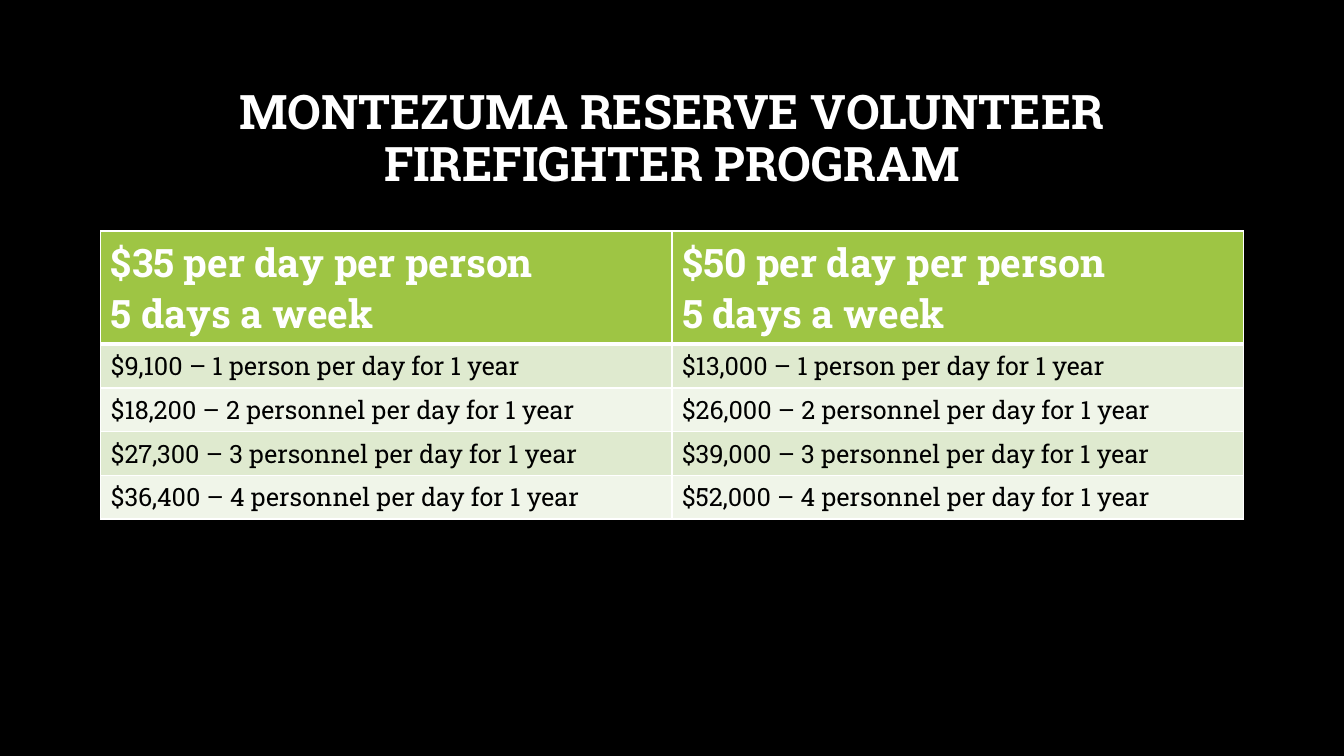
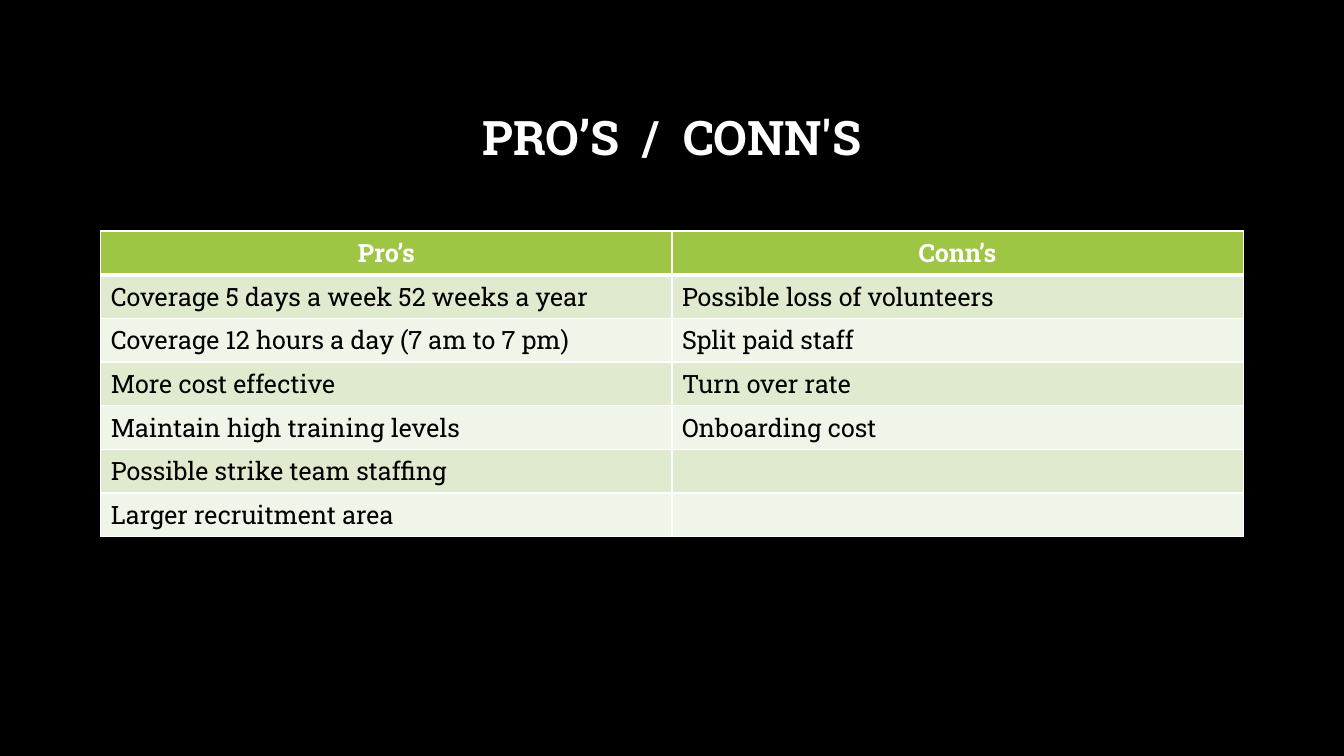
from lxml.etree import SubElement
from pptx import Presentation
from pptx.dml.color import RGBColor
from pptx.enum.text import MSO_ANCHOR, MSO_AUTO_SIZE, PP_ALIGN
from pptx.oxml.ns import qn
from pptx.util import Inches, Pt

COLORS = {
    "background": "000000",
    "light": "FFFFFF",
    "dark": "000000",
    "header": "9EC544",
    "bands": ["DFEACF", "F0F5E9"],
}
FONT = "Roboto Slab"
SLIDE_WIDTH, SLIDE_HEIGHT = Inches(13.33), Inches(7.5)
COLUMN, ROW = SLIDE_WIDTH / 40, SLIDE_HEIGHT / 90
TITLE_BOX = (3, 8, 34, 17.4)
TABLE_BOX = (3, 27.5, 34)
LINE_ROWS = 5.2

PROGRAM = {
    "title": "MONTEZUMA RESERVE VOLUNTEER FIREFIGHTER PROGRAM",
    "headings": ["$35 per day per person\n5 days a week",
                 "$50 per day per person\n5 days a week"],
    "entries": [
        ("$9,100 – 1 person per day for 1 year", "$13,000 – 1 person per day for 1 year"),
        ("$18,200 – 2 personnel per day for 1 year", "$26,000 – 2 personnel per day for 1 year"),
        ("$27,300 – 3 personnel per day for 1 year", "$39,000 – 3 personnel per day for 1 year"),
        ("$36,400 – 4 personnel per day for 1 year", "$52,000 – 4 personnel per day for 1 year"),
    ],
    "heading_size": 28,
    "heading_rows": 13.4,
}
PROS_AND_CONS = {
    "title": "PRO’S  /  CONN'S",
    "headings": ["Pro’s", "Conn’s"],
    "entries": [
        ("Coverage 5 days a week 52 weeks a year", "Possible loss of volunteers"),
        ("Coverage 12 hours a day (7 am to 7 pm)", "Split paid staff"),
        ("More cost effective", "Turn over rate"),
        ("Maintain high training levels", "Onboarding cost"),
        ("Possible strike team staffing", ""),
        ("Larger recruitment area", ""),
    ],
    "heading_align": PP_ALIGN.CENTER,
}


def write(frame, text, size=18, color="dark", bold=False, align=PP_ALIGN.LEFT, spacing=None):
    """Fill a text frame with one formatted paragraph for each line of text."""
    frame.text = text
    for paragraph in frame.paragraphs:
        paragraph.alignment = align
        paragraph.line_spacing = spacing
        font = paragraph.font
        font.name, font.size, font.bold = FONT, Pt(size), bold
        font.color.rgb = RGBColor.from_string(COLORS[color])
        for run in paragraph.runs:
            run.font.name = FONT


def paint_cell(cell, fill, top=1, bottom=1):
    """Give a cell its white borders, in points, and its fill."""
    properties = cell._tc.get_or_add_tcPr()
    for side, width in {"L": 1, "R": 1, "T": top, "B": bottom}.items():
        border = SubElement(properties, qn(f"a:ln{side}"), w=str(Pt(width)))
        solid = SubElement(border, qn("a:solidFill"))
        SubElement(solid, qn("a:srgbClr"), val=COLORS["light"])
    cell.fill.solid()
    cell.fill.fore_color.rgb = RGBColor.from_string(fill)


def prepare_layout(deck):
    """Set the shared background and title box and return the title layout."""
    background = deck.slide_master.background.fill
    background.solid()
    background.fore_color.rgb = RGBColor.from_string(COLORS["background"])
    layout = deck.slide_layouts[5]
    title = layout.placeholders[0]
    left, top, width, height = TITLE_BOX
    title.left, title.width = int(left * COLUMN), int(width * COLUMN)
    title.top, title.height = int(top * ROW), int(height * ROW)
    title.text_frame.vertical_anchor = MSO_ANCHOR.MIDDLE
    title.text_frame.auto_size = MSO_AUTO_SIZE.NONE
    return layout


def add_comparison(slide, box, headings, entries, heading_size=18,
                   heading_rows=LINE_ROWS, heading_align=PP_ALIGN.LEFT):
    """Place a table with a green heading row and banded entries in a box."""
    left, top, width = box
    height = heading_rows + LINE_ROWS * len(entries)
    table = slide.shapes.add_table(
        len(entries) + 1, len(headings), int(left * COLUMN), int(top * ROW),
        int(width * COLUMN), int(height * ROW)).table
    for index, line in enumerate(table.rows):
        line.height = int((LINE_ROWS if index else heading_rows) * ROW)
    for cell, heading in zip(table.rows[0].cells, headings):
        write(cell.text_frame, heading, size=heading_size, color="light",
              bold=True, align=heading_align)
        paint_cell(cell, COLORS["header"], bottom=3)
    for index, entry in enumerate(entries):
        for cell, text in zip(table.rows[index + 1].cells, entry):
            write(cell.text_frame, text)
            paint_cell(cell, COLORS["bands"][index % 2], top=1 if index else 3)


def add_comparison_slide(deck, layout, title, **comparison):
    """Add a slide with a centred title above a comparison table."""
    slide = deck.slides.add_slide(layout)
    write(slide.shapes.title.text_frame, title, size=34, color="light",
          bold=True, align=PP_ALIGN.CENTER, spacing=0.9)
    add_comparison(slide, TABLE_BOX, **comparison)


def main():
    """Build and save the presentation."""
    deck = Presentation()
    deck.slide_width, deck.slide_height = SLIDE_WIDTH, SLIDE_HEIGHT
    layout = prepare_layout(deck)
    for content in (PROGRAM, PROS_AND_CONS):
        add_comparison_slide(deck, layout, **content)
    deck.save("out.pptx")


if __name__ == "__main__":
    main()
